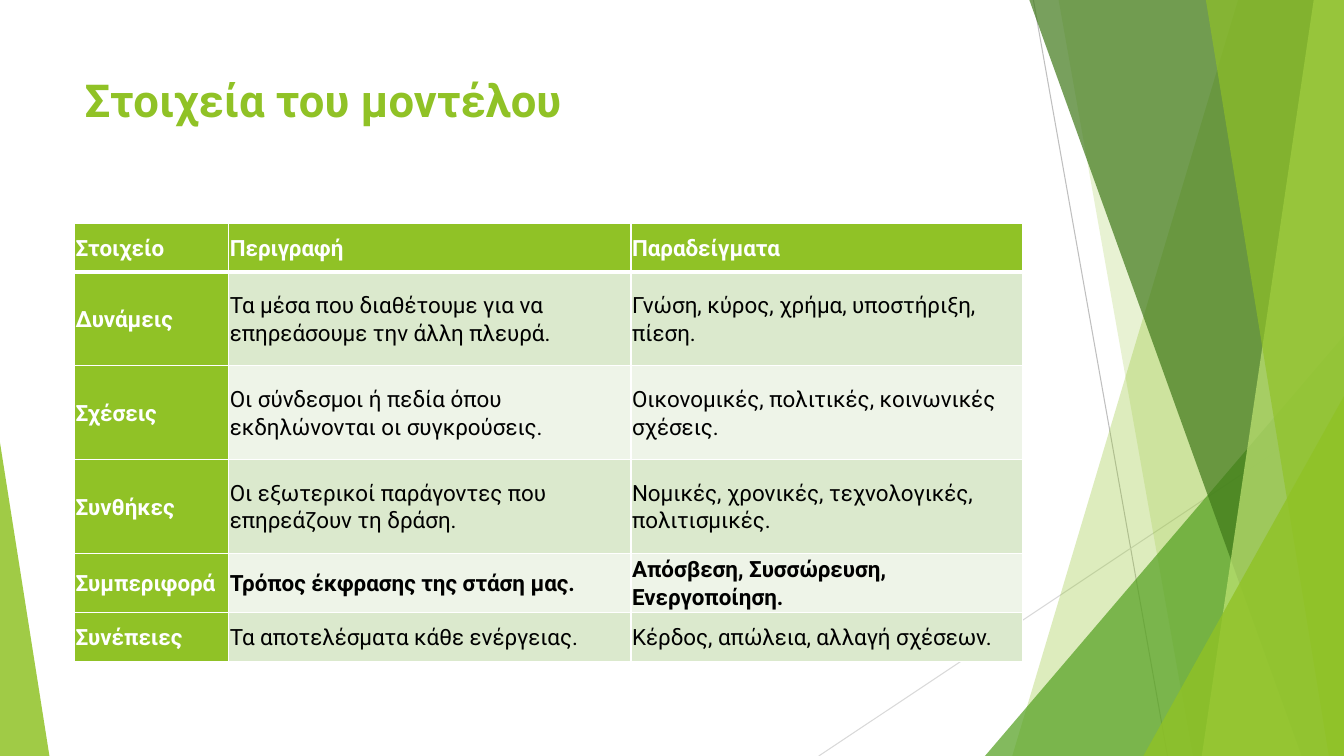
import pptx
import pptx.util
import pptx.dml.color
import pptx.enum.shapes
import pptx.enum.text
import pptx.oxml
import pptx.oxml.ns

SLIDE_WIDTH = pptx.util.Inches(13.33)
SLIDE_HEIGHT = pptx.util.Inches(7.5)
FONT = "Roboto"
LIME, WHITE, BLACK = "90C226", "FFFFFF", "000000"
BANDS = ("DBE9CD", "EEF4E8")
MARGIN, CONTENT_WIDTH = 5.55, 70.52

HEADINGS = ("Στοιχείο", "Περιγραφή", "Παραδείγματα")
ELEMENTS = (
    ("Δυνάμεις", "Τα μέσα που διαθέτουμε για να επηρεάσουμε την άλλη πλευρά.",
     "Γνώση, κύρος, χρήμα, υποστήριξη, πίεση."),
    ("Σχέσεις", "Οι σύνδεσμοι ή πεδία όπου εκδηλώνονται οι συγκρούσεις.",
     "Οικονομικές, πολιτικές, κοινωνικές σχέσεις."),
    ("Συνθήκες", "Οι εξωτερικοί παράγοντες που επηρεάζουν τη δράση.",
     "Νομικές, χρονικές, τεχνολογικές, πολιτισμικές."),
    ("Συμπεριφορά", "Τρόπος έκφρασης της στάση μας.",
     "Απόσβεση, Συσσώρευση, Ενεργοποίηση."),
    ("Συνέπειες", "Τα αποτελέσματα κάθε ενέργειας.",
     "Κέρδος, απώλεια, αλλαγή σχέσεων."),
)
EMPHASISED = "Συμπεριφορά"
COLUMN_SHARES = (11.48, 29.93, 29.11)
ROW_SHARES = (6.4, 12.4, 12.4, 12.4, 6.4, 6.4)


def across(percent):
    return round(SLIDE_WIDTH * percent / 100)


def down(percent):
    return round(SLIDE_HEIGHT * percent / 100)


def rgb(color):
    return pptx.dml.color.RGBColor.from_string(color)


def add_xml(parent, tag, **attributes):
    child = parent.makeelement(pptx.oxml.ns.qn(tag), attributes)
    parent.append(child)
    return child


def add_hairline(slide, start, end, color):
    hairline = slide.shapes.add_connector(
        pptx.enum.shapes.MSO_CONNECTOR.STRAIGHT,
        across(start[0]), down(start[1]), across(end[0]), down(end[1]))
    hairline.line.color.rgb = rgb(color)
    hairline.line.width = pptx.util.Pt(0.75)
    add_xml(hairline.element.spPr, "a:effectLst")


def tint(facet, color, opacity):
    facet.shadow.inherit = False
    facet.line.fill.background()
    facet.fill.solid()
    facet.fill.fore_color.rgb = rgb(color)
    shade = facet.element.spPr.find(".//" + pptx.oxml.ns.qn("a:srgbClr"))
    add_xml(shade, "a:alpha", val=str(opacity * 1000))


def add_band(slide, top_left, bottom_left, color, opacity):
    builder = slide.shapes.build_freeform(across(top_left), 0)
    builder.add_line_segments([
        (SLIDE_WIDTH, 0), (SLIDE_WIDTH, SLIDE_HEIGHT),
        (across(bottom_left), SLIDE_HEIGHT)], close=True)
    tint(builder.convert_to_shape(), color, opacity)


def add_corner(slide, left, top, width, apex, color, opacity):
    corner = slide.shapes.add_shape(
        pptx.enum.shapes.MSO_SHAPE.ISOSCELES_TRIANGLE,
        across(left), down(top), across(width), down(100 - top))
    corner.adjustments[0] = apex
    tint(corner, color, opacity)


def add_run(paragraph, text, size, color, bold):
    run = paragraph.add_run()
    run.text = text
    run.font.name = FONT
    run.font.size = pptx.util.Pt(size)
    run.font.bold = bold
    run.font.color.rgb = rgb(color)


def add_title(slide, text):
    title = slide.shapes.add_textbox(
        across(MARGIN), down(8.93), across(CONTENT_WIDTH), down(19.2))
    title.text_frame.word_wrap = True
    title.text_frame.vertical_anchor = pptx.enum.text.MSO_ANCHOR.TOP
    add_run(title.text_frame.paragraphs[0], text, 32.4, LIME, True)


def add_borders(cell, top, bottom):
    properties = cell._tc.get_or_add_tcPr()
    sides = (("a:lnL", 1), ("a:lnR", 1), ("a:lnT", top), ("a:lnB", bottom))
    for side, points in sides:
        border = add_xml(properties, side, w=str(pptx.util.Pt(points)))
        add_xml(add_xml(border, "a:solidFill"), "a:srgbClr", val=WHITE)


def fill_cell(cell, text, background, color, bold, top, bottom):
    add_borders(cell, top, bottom)
    cell.fill.solid()
    cell.fill.fore_color.rgb = rgb(background)
    cell.vertical_anchor = pptx.enum.text.MSO_ANCHOR.MIDDLE
    inset = pptx.util.Inches(0.01)
    cell.margin_left = cell.margin_right = inset
    cell.margin_top = cell.margin_bottom = inset
    paragraph = cell.text_frame.paragraphs[0]
    paragraph.line_spacing = 1.07
    paragraph.space_after = pptx.util.Pt(8)
    add_run(paragraph, text, 16, color, bold)


def add_elements_table(slide):
    table = slide.shapes.add_table(
        len(ROW_SHARES), len(COLUMN_SHARES), across(MARGIN), down(29.6),
        across(CONTENT_WIDTH), down(sum(ROW_SHARES))).table
    for column, share in zip(table.columns, COLUMN_SHARES):
        column.width = across(share)
    for row, share in zip(table.rows, ROW_SHARES):
        row.height = down(share)
    for r, texts in enumerate((HEADINGS,) + ELEMENTS):
        for c, text in enumerate(texts):
            is_heading = r == 0 or c == 0
            fill_cell(
                table.cell(r, c), text,
                background=LIME if is_heading else BANDS[(r - 1) % 2],
                color=WHITE if is_heading else BLACK,
                bold=is_heading or texts[0] == EMPHASISED,
                top=3 if r == 1 else 1, bottom=3 if r == 0 else 1)


def add_backdrop(slide):
    add_hairline(slide, (76.89, 0), (86.87, 100), "BFBFBF")
    add_hairline(slide, (100, 53.73), (60.92, 100), "D9D9D9")
    add_band(slide, 92.12, 75.32, LIME, 30)
    add_band(slide, 78.77, 88.75, LIME, 20)
    add_corner(slide, 73.29, 44.4, 26.71, 1, "54A021", 72)
    add_band(slide, 76.59, 96.85, "3F7819", 70)
    add_band(slide, 97.75, 89.42, "C0E474", 70)
    add_band(slide, 89.72, 98.87, LIME, 65)
    add_corner(slide, 85.07, 52.4, 14.93, 1, LIME, 80)
    add_corner(slide, 0, 58.53, 3.68, 0, LIME, 85)


def main():
    presentation = pptx.Presentation()
    presentation.slide_width = SLIDE_WIDTH
    presentation.slide_height = SLIDE_HEIGHT
    slide = presentation.slides.add_slide(presentation.slide_layouts[6])
    add_backdrop(slide)
    add_title(slide, "Στοιχεία του μοντέλου")
    add_elements_table(slide)
    presentation.save("out.pptx")


if __name__ == "__main__":
    main()
